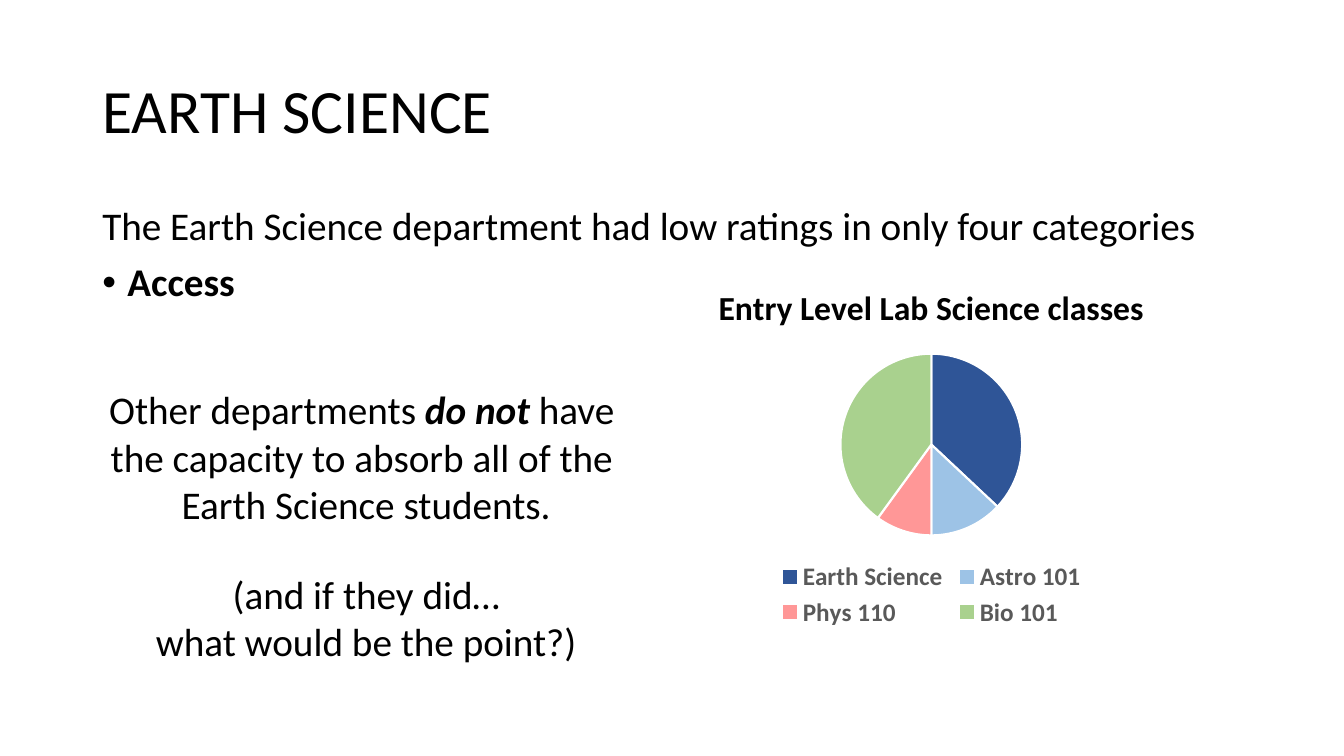
import dataclasses
import pptx
import pptx.chart.data
import pptx.dml.color
import pptx.enum.chart
import pptx.enum.text
import pptx.oxml
import pptx.oxml.ns
import pptx.util

Pt = pptx.util.Pt
Align = pptx.enum.text.PP_ALIGN
Anchor = pptx.enum.text.MSO_ANCHOR


@dataclasses.dataclass(frozen=True)
class Theme:
    face: str = "Calibri"
    ink: str = "000000"
    gray: str = "595959"
    white: str = "FFFFFF"
    slices: tuple = ("2F5597", "9DC3E6", "FF9797", "A9D18E")
    head: int = 44
    body: int = 28
    label: int = 24
    key: int = 18


class Deck:
    def __init__(self, theme):
        self.theme = theme
        self.file = pptx.Presentation()
        self.file.slide_width = Pt(960)
        self.file.slide_height = Pt(540)
        self.slide = self.file.slides.add_slide(self.file.slide_layouts[5])

    def color(self, code):
        return pptx.dml.color.RGBColor.from_string(code)

    def style(self, font, size, code, bold=False, slant=False):
        font.name = self.theme.face
        font.size = Pt(size)
        font.bold = bold
        font.italic = slant
        font.color.rgb = self.color(code)

    def fill(self, para, runs, size):
        for text, strong in runs:
            for index, line in enumerate(text.split("\n")):
                if index:
                    para.add_line_break()
                run = para.add_run()
                run.text = line
                self.style(run.font, size, self.theme.ink, "b" in strong, "i" in strong)

    def title(self, box, text):
        shape = self.slide.shapes.title
        shape.left, shape.top, shape.width, shape.height = map(Pt, box)
        frame = shape.text_frame
        frame.auto_size = pptx.enum.text.MSO_AUTO_SIZE.NONE
        frame.vertical_anchor = Anchor.MIDDLE
        para = frame.paragraphs[0]
        para.alignment = Align.LEFT
        para.line_spacing = 0.9
        self.fill(para, [(text, "")], self.theme.head)

    def text(self, box, paras, align=Align.LEFT, lead=1.0, before=0):
        frame = self.slide.shapes.add_textbox(*map(Pt, box)).text_frame
        frame.word_wrap = True
        for index, (runs, dot) in enumerate(paras):
            para = frame.add_paragraph() if index else frame.paragraphs[0]
            para.alignment = align
            para.line_spacing = lead
            para.space_before = Pt(before)
            self.fill(para, runs, self.theme.body)
            if dot:
                self.bullet(para)

    def bullet(self, para):
        props = para._p.get_or_add_pPr()
        props.set("marL", str(Pt(18)))
        props.set("indent", str(-Pt(18)))
        for tag, name, value in (("a:buFont", "typeface", "Arial"), ("a:buChar", "char", "•")):
            mark = pptx.oxml.parse_xml(f"<{tag} {pptx.oxml.ns.nsdecls('a')}/>")
            mark.set(name, value)
            props.append(mark)

    def pie(self, box, label, shares):
        data = pptx.chart.data.CategoryChartData()
        data.categories = list(shares)
        data.add_series("Series 1", list(shares.values()))
        kind = pptx.enum.chart.XL_CHART_TYPE.PIE
        chart = self.slide.shapes.add_chart(kind, *map(Pt, box), data).chart
        chart.font.name = self.theme.face
        chart.has_title = True
        run = chart.chart_title.text_frame.paragraphs[0].add_run()
        run.text = label
        self.style(run.font, self.theme.label, self.theme.ink, True)
        chart.chart_title.include_in_layout = False
        chart.has_legend = True
        chart.legend.position = pptx.enum.chart.XL_LEGEND_POSITION.BOTTOM
        chart.legend.include_in_layout = False
        self.style(chart.legend.font, self.theme.key, self.theme.gray, True)
        plot = chart.plots[0]
        plot.vary_by_categories = True
        for index, code in enumerate(self.theme.slices):
            part = plot.series[0].points[index].format
            part.fill.solid()
            part.fill.fore_color.rgb = self.color(code)
            part.line.color.rgb = self.color(self.theme.white)
            part.line.width = Pt(1.5)


def main():
    deck = Deck(Theme())
    deck.title((66, 28.75, 828, 104.4), "EARTH SCIENCE")
    intro = "The Earth Science department had low ratings in only four categories"
    deck.text(
        (66, 144, 828, 95.75),
        [([(intro, "")], False), ([("Access", "b")], True)],
        lead=0.9,
        before=10,
    )
    claim = [
        ("Other departments ", ""),
        ("do not ", "bi"),
        ("have \nthe capacity to absorb all of the \nEarth Science students.", ""),
    ]
    deck.text((49, 272, 425, 109), [(claim, False)], Align.CENTER)
    aside = [("(and if they did…\nwhat would be the point?)", "")]
    deck.text((49, 403.5, 425, 75), [(aside, False)], Align.CENTER)
    deck.pie(
        (450, 190, 430.5, 262),
        "Entry Level Lab Science classes",
        {"Earth Science": 37, "Astro 101": 13, "Phys 110": 10, "Bio 101": 40},
    )
    deck.file.save("out.pptx")


if __name__ == "__main__":
    main()
